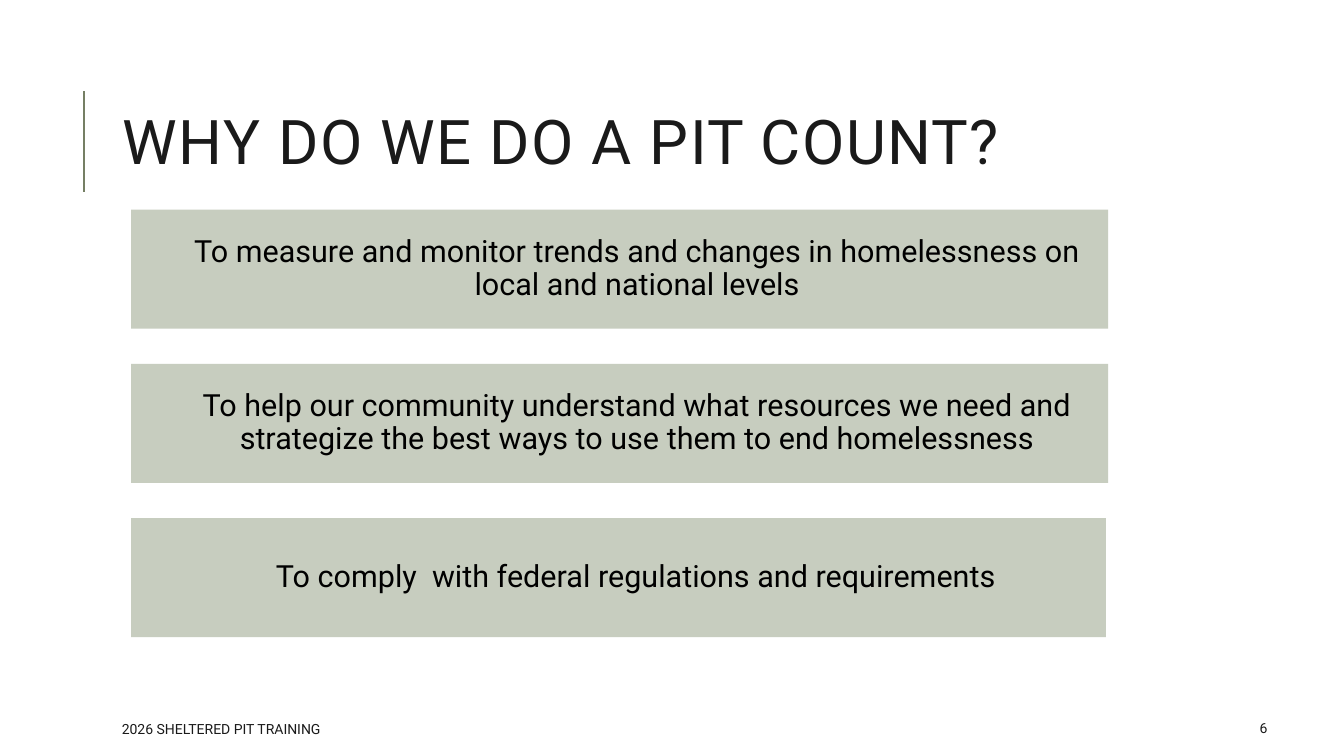
"""Build the slide that gives three reasons for a PIT count."""
from lxml import etree
from pptx import Presentation
from pptx.dml.color import RGBColor
from pptx.enum.shapes import MSO_CONNECTOR, MSO_SHAPE
from pptx.enum.text import MSO_ANCHOR as Anchor, PP_ALIGN as Align
from pptx.oxml.ns import qn
from pptx.util import Pt

PX = 9144
FONT = "Roboto"
INK = RGBColor(0x1A, 0x1A, 0x1A)
BLACK = RGBColor(0x00, 0x00, 0x00)
SAGE = RGBColor(0xC7, 0xCD, 0xBF)
OLIVE = RGBColor(0x75, 0x7F, 0x64)

REASONS = [
    ("To measure and monitor trends and changes in homelessness on local and national levels", 969),
    ("To help our community understand what resources we need and strategize "
     "the best ways to use them to end homelessness", 969),
    ("To comply  with federal regulations and requirements", 967),
]
BAR_LEFT, BAR_TOP, BAR_HEIGHT, BAR_STEP = 130, 208, 118, 153


def write(shape, text, size=10, color=INK, align=Align.LEFT, leading=1.0,
          tracking=0, insets=(10, 5, 10, 5)):
    """Fill a shape with one formatted paragraph."""
    frame = shape.text_frame
    frame.word_wrap = True
    frame.vertical_anchor = Anchor.MIDDLE
    (frame.margin_left, frame.margin_top,
     frame.margin_right, frame.margin_bottom) = [inset * PX for inset in insets]
    para = frame.paragraphs[0]
    para.alignment = align
    para.line_spacing = leading
    span = para.add_run()
    span.text = text
    span.font.name = FONT
    span.font.size = Pt(size)
    span.font.color.rgb = color
    if tracking:
        span.font._element.set("spc", str(tracking * 100))


deck = Presentation()
deck.slide_width = 1333 * PX
deck.slide_height = 750 * PX
page = deck.slides.add_slide(deck.slide_layouts[6])

rule = page.shapes.add_connector(MSO_CONNECTOR.STRAIGHT, 83 * PX, 190 * PX, 83 * PX, 90 * PX)
rule.line.color.rgb = OLIVE
rule.line.width = Pt(1.5)
etree.SubElement(rule._element.spPr, qn("a:effectLst"))

title = page.shapes.add_textbox(112 * PX, 64 * PX, 1156 * PX, 164 * PX)
write(title, "WHY DO WE DO A PIT COUNT?", size=44, leading=0.8, tracking=1)

for row, (reason, width) in enumerate(REASONS):
    bar = page.shapes.add_shape(MSO_SHAPE.RECTANGLE, BAR_LEFT * PX,
                                (BAR_TOP + row * BAR_STEP) * PX, width * PX, BAR_HEIGHT * PX)
    bar.shadow.inherit = False
    bar.fill.solid()
    bar.fill.fore_color.rgb = SAGE
    bar.line.fill.background()
    write(bar, reason, size=21.8, color=BLACK, align=Align.CENTER, leading=0.9,
          insets=(52, 9, 17, 9))

number = page.shapes.add_textbox(1161 * PX, 707 * PX, 106 * PX, 30 * PX)
write(number, "6", align=Align.RIGHT)

footer = page.shapes.add_textbox(111 * PX, 708 * PX, 645 * PX, 30 * PX)
write(footer, "2026 SHELTERED PIT TRAINING")

deck.save("out.pptx")
